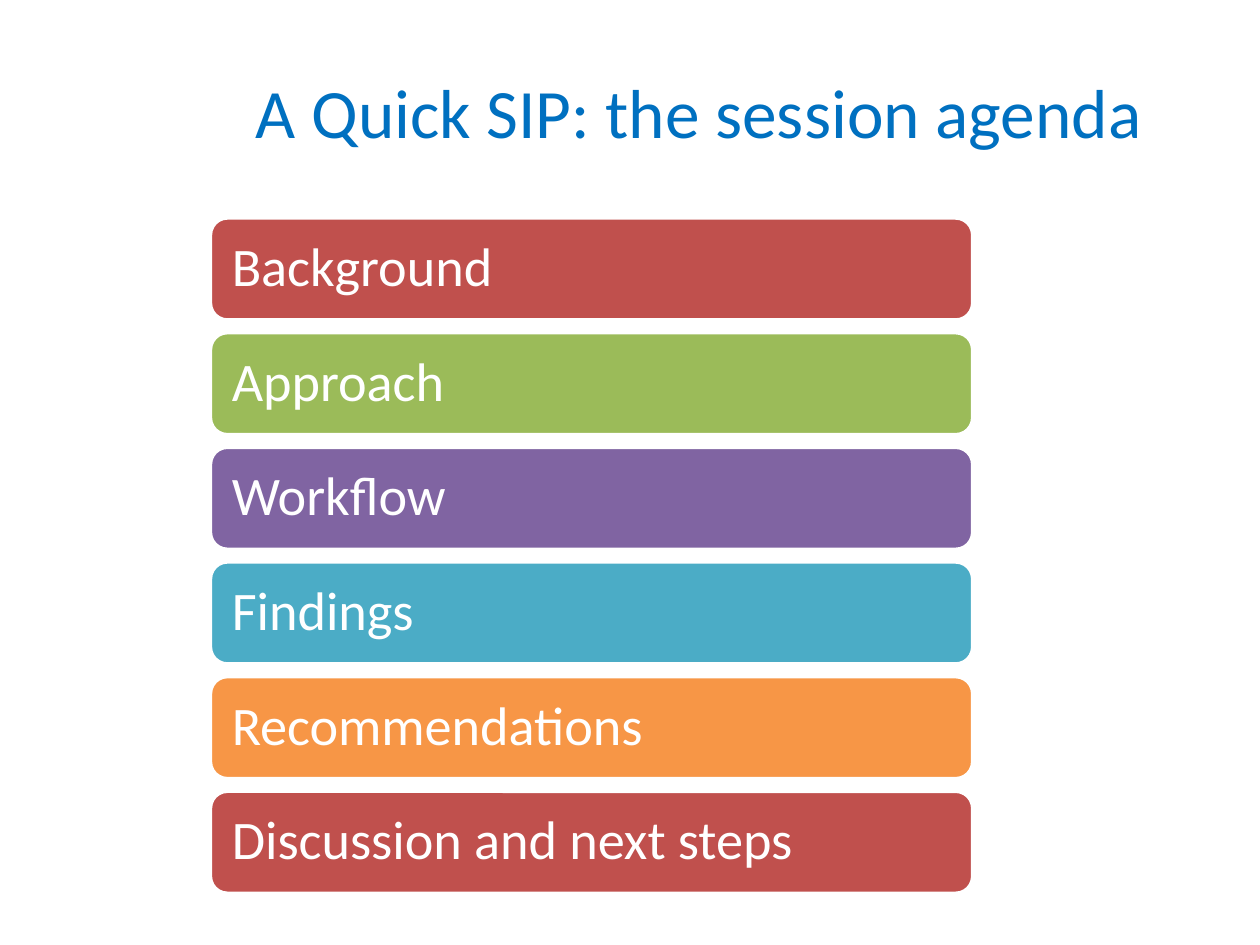
from pptx import Presentation
from pptx.dml.color import RGBColor
from pptx.enum.shapes import MSO_SHAPE as Shape
from pptx.enum.text import MSO_ANCHOR as Anchor, MSO_AUTO_SIZE as AutoSize, PP_ALIGN as Align
from pptx.util import Inches, Pt

BLUE = RGBColor(0x00, 0x70, 0xC0)
WHITE = RGBColor(0xFF, 0xFF, 0xFF)
RED = RGBColor(0xC0, 0x50, 0x4D)
GREEN = RGBColor(0x9B, 0xBB, 0x59)
PURPLE = RGBColor(0x80, 0x64, 0xA2)
TEAL = RGBColor(0x4B, 0xAC, 0xC6)
ORANGE = RGBColor(0xF7, 0x96, 0x46)

AGENDA = [
    ("Background", RED),
    ("Approach", GREEN),
    ("Workflow", PURPLE),
    ("Findings", TEAL),
    ("Recommendations", ORANGE),
    ("Discussion and next steps", RED),
]


def add_run(para, text, size, color):
    span = para.add_run()
    span.text = text
    span.font.name = "Calibri"
    span.font.size = Pt(size)
    span.font.color.rgb = color


deck = Presentation()
deck.slide_width, deck.slide_height = Inches(10), Inches(7.5)
page = deck.slides.add_slide(deck.slide_layouts[5])

# Title
title = page.shapes.title
title.left, title.top = Inches(1.93), Inches(0.29)
title.width, title.height = Inches(7.56), Inches(1.17)
title.text_frame.vertical_anchor = Anchor.MIDDLE
title.text_frame.auto_size = AutoSize.NONE
para = title.text_frame.paragraphs[0]
para.alignment = Align.LEFT
add_run(para, "A Quick SIP: the session agenda", 39.6, BLUE)

# Agenda bars, evenly stacked
FIRST_TOP, STEP = 1.73, 0.91
for row, (topic, color) in enumerate(AGENDA):
    bar = page.shapes.add_shape(Shape.ROUNDED_RECTANGLE, Inches(1.67),
                                Inches(FIRST_TOP + row * STEP), Inches(6.05), Inches(0.81))
    bar.shadow.inherit = False
    bar.fill.solid()
    bar.fill.fore_color.rgb = color
    bar.line.color.rgb = WHITE
    bar.line.width = Pt(2)

    frame = bar.text_frame
    frame.word_wrap = True
    frame.vertical_anchor = Anchor.MIDDLE
    frame.margin_left = frame.margin_right = Inches(0.13)
    frame.margin_top = frame.margin_bottom = Inches(0.13)
    para = frame.paragraphs[0]
    para.alignment = Align.LEFT
    para.line_spacing = 0.9
    add_run(para, topic, 31, WHITE)

deck.save("out.pptx")
